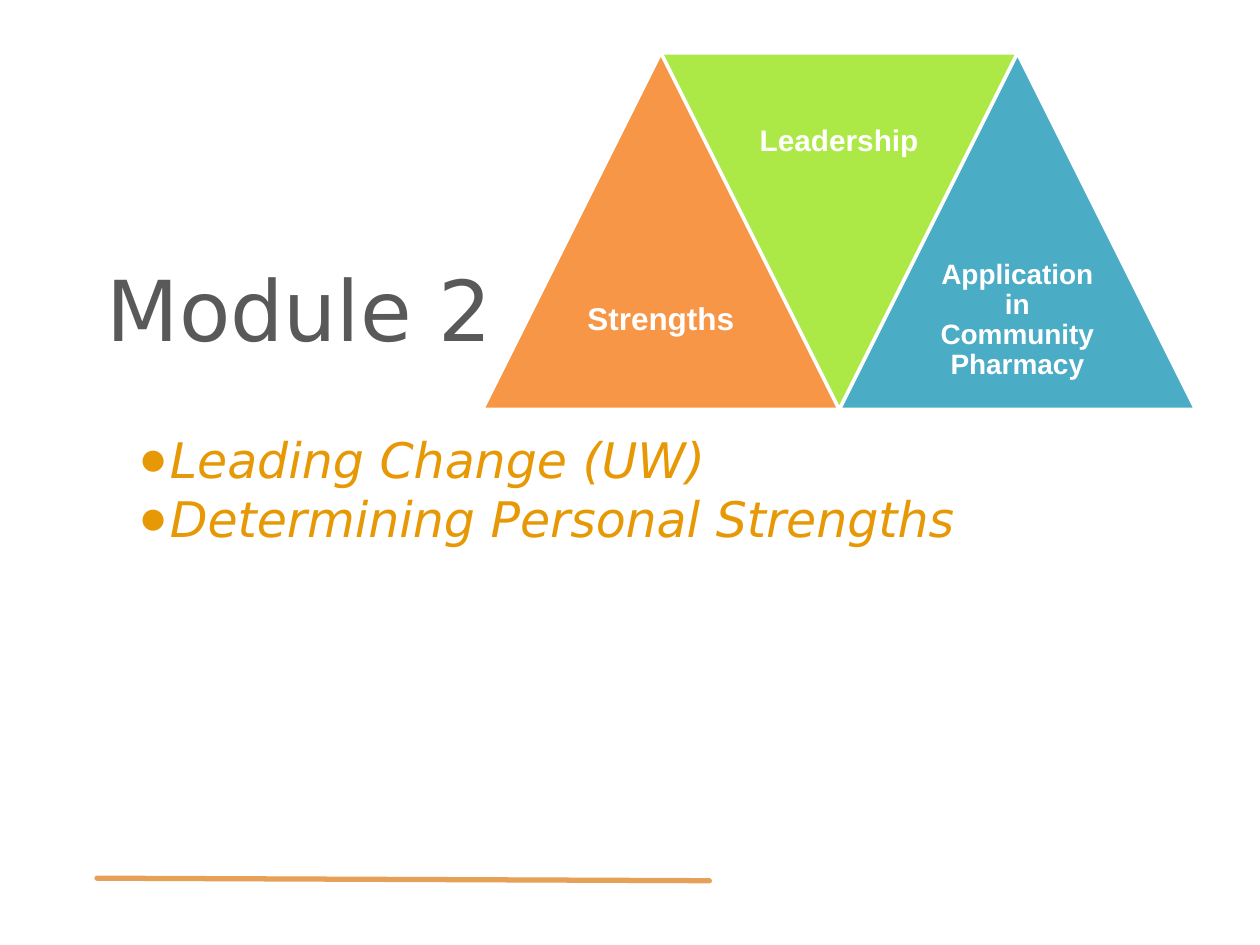
"""Build the Module 2 title slide with its row of three triangles."""
from dataclasses import dataclass

from lxml import etree
from pptx import Presentation
from pptx.dml.color import RGBColor
from pptx.enum.shapes import MSO_CONNECTOR, MSO_SHAPE
from pptx.enum.text import MSO_ANCHOR, PP_ALIGN
from pptx.oxml.ns import qn
from pptx.util import Inches, Pt

TOP, MIDDLE = MSO_ANCHOR.TOP, MSO_ANCHOR.MIDDLE
LEFT, CENTER = PP_ALIGN.LEFT, PP_ALIGN.CENTER
STRAIGHT = MSO_CONNECTOR.STRAIGHT
TRIANGLE = MSO_SHAPE.ISOSCELES_TRIANGLE


@dataclass(frozen=True)
class Theme:
    head: str = "DejaVu Sans"
    label: str = "Arial"
    gray: str = "595959"
    gold: str = "E79805"
    rule: str = "E6A057"
    white: str = "FFFFFF"
    blue: str = "4BACC6"
    green: str = "ACE946"
    orange: str = "F79646"
    title: int = 48
    body: int = 28
    small: int = 16
    mid: int = 17
    large: int = 18


class Page:
    def __init__(self, slide, theme):
        self.slide = slide
        self.theme = theme

    def rule(self, start, end):
        line = self.slide.shapes.add_connector(
            STRAIGHT, *map(Inches, start + end))
        line.line.color.rgb = RGBColor.from_string(self.theme.rule)
        line.line.width = Pt(3)
        line.line._get_or_add_ln().set("cap", "rnd")
        etree.SubElement(line._element.spPr, qn("a:effectLst"))

    def text(self, box, words, font, size, color, inset=0.1, anchor=TOP,
             align=LEFT, bold=False, italic=False, space=1.0, mark=None):
        frame = self.slide.shapes.add_textbox(*map(Inches, box)).text_frame
        frame.word_wrap = True
        frame.vertical_anchor = anchor
        frame.margin_left = frame.margin_right = Inches(inset)
        frame.margin_top = frame.margin_bottom = Inches(inset)
        frame.text = words
        for para in frame.paragraphs:
            para.alignment = align
            para.line_spacing = space
            if mark:
                self.bullet(para, mark, color)
            for run in para.runs:
                run.font.name = font
                run.font.size = Pt(size)
                run.font.bold = bold
                run.font.italic = italic
                run.font.color.rgb = RGBColor.from_string(color)

    def bullet(self, para, mark, color):
        props = para._p.get_or_add_pPr()
        props.set("marL", str(Inches(0.5)))
        props.set("indent", str(Inches(-0.25)))
        tint = etree.SubElement(props, qn("a:buClr"))
        etree.SubElement(tint, qn("a:srgbClr"), val=color)
        etree.SubElement(props, qn("a:buFont"), typeface=self.theme.label)
        etree.SubElement(props, qn("a:buChar"), char=mark)

    def triangle(self, left, top, side, words, size, color, flip=False):
        shape = self.slide.shapes.add_shape(
            TRIANGLE, *map(Inches, (left, top, side, side)))
        shape.shadow.inherit = False
        shape.rotation = 180 if flip else 0
        shape.fill.solid()
        shape.fill.fore_color.rgb = RGBColor.from_string(color)
        shape.line.color.rgb = RGBColor.from_string(self.theme.white)
        shape.line.width = Pt(2)
        half = side / 2
        box = (left + side / 4, top if flip else top + half, half, half)
        self.text(box, words, self.theme.label, size, self.theme.white,
                  inset=0.07, anchor=MIDDLE, align=CENTER, bold=True,
                  space=0.9)


def main():
    deck = Presentation()
    deck.slide_width, deck.slide_height = Inches(10), Inches(7.5)
    theme = Theme()
    page = Page(deck.slides.add_slide(deck.slide_layouts[6]), theme)

    page.rule((0.77, 6.97), (5.63, 6.99))
    page.text((0.75, 1.64, 8.5, 1.61), "Module 2", theme.head, theme.title,
              theme.gray, anchor=MIDDLE)
    page.text((0.75, 3.31, 7.75, 0.6),
              "Leading Change (UW)\nDetermining Personal Strengths",
              theme.head, theme.body, theme.gold, italic=True, mark="●")

    left, top, side = 3.83, 0.42, 2.83
    parts = [
        (2, "Application in Community Pharmacy", theme.small, theme.blue),
        (1, "Leadership", theme.mid, theme.green),
        (0, "Strengths", theme.large, theme.orange),
    ]
    for step, words, size, color in parts:
        page.triangle(left + step * side / 2, top, side, words, size, color,
                      flip=step == 1)
    deck.save("out.pptx")


if __name__ == "__main__":
    main()
